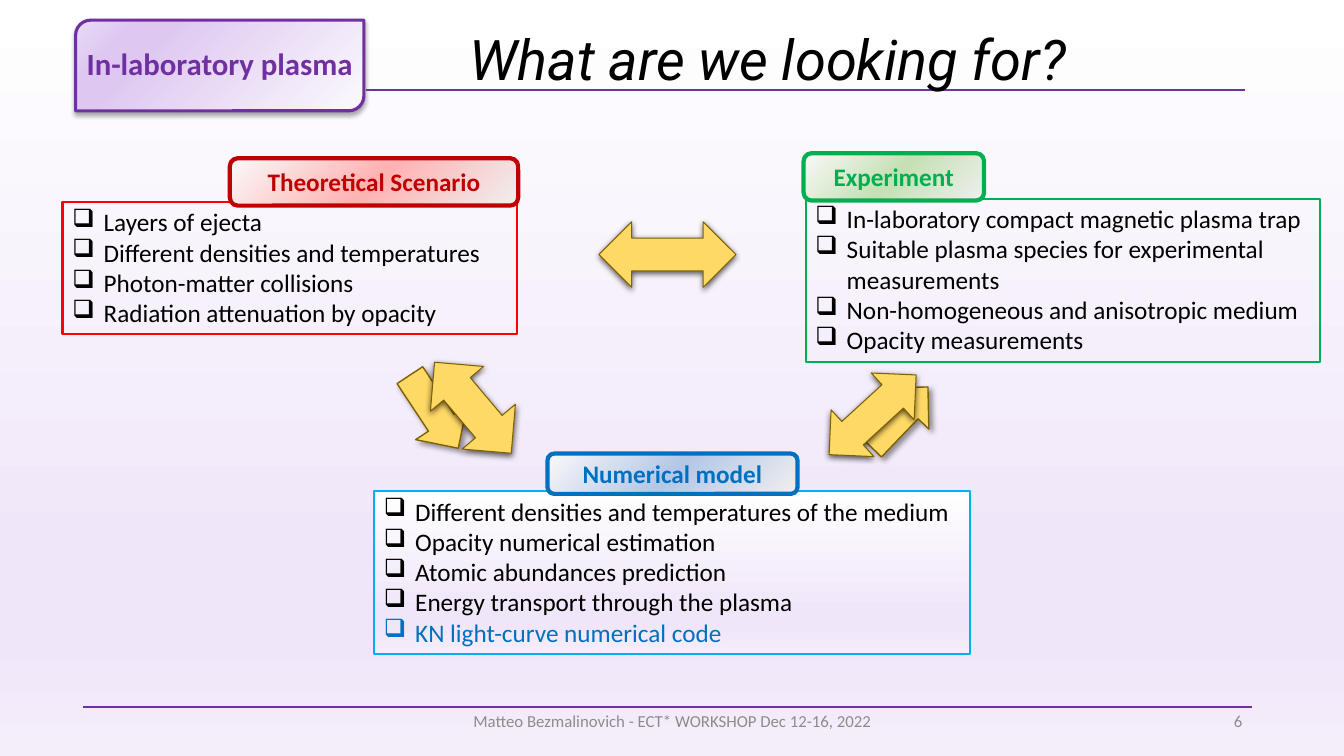
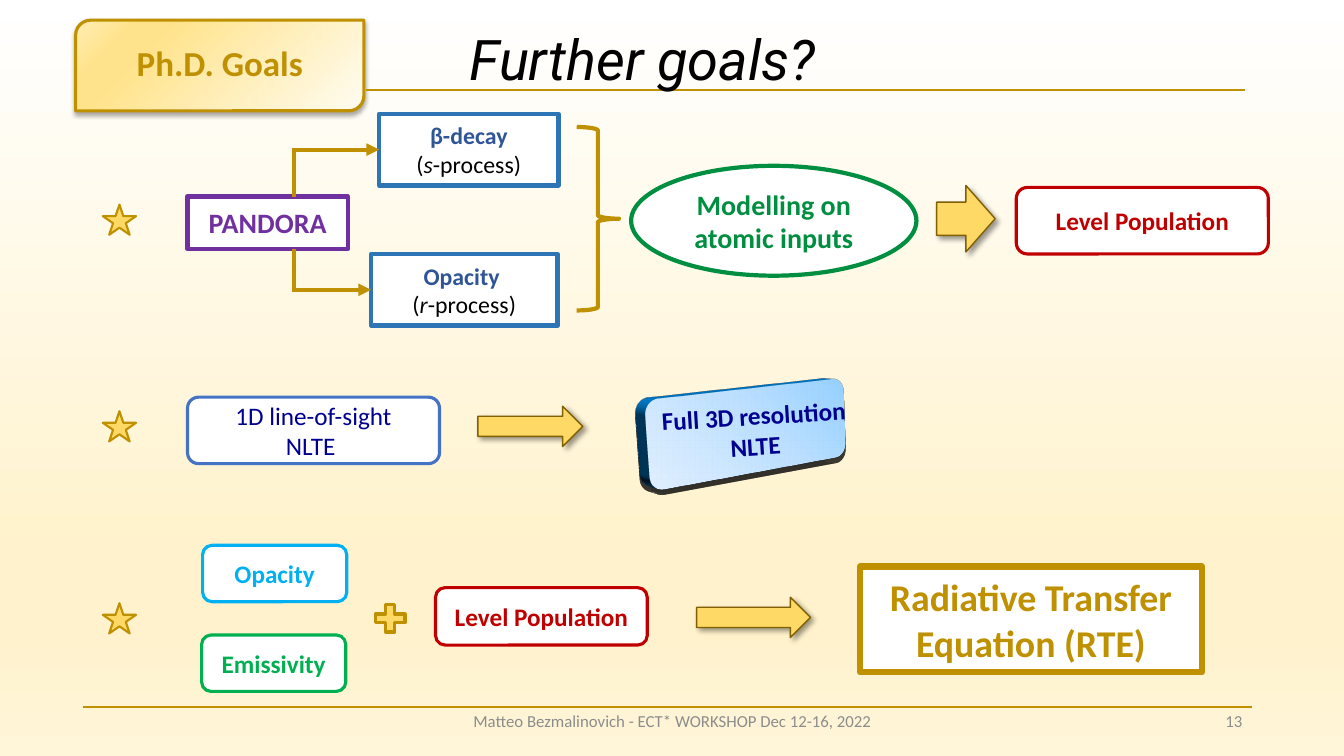
from dataclasses import dataclass

from pptx import Presentation
from pptx.dml.color import RGBColor
from pptx.enum.shapes import MSO_CONNECTOR as LINK, MSO_SHAPE as SHAPE
from pptx.enum.text import MSO_ANCHOR as ANCHOR, PP_ALIGN as ALIGN
from pptx.oxml.ns import qn
from pptx.oxml.xmlchemy import OxmlElement
from pptx.util import Inches, Pt

WHITE = RGBColor(0xFF, 0xFF, 0xFF)
BLACK = RGBColor(0, 0, 0)
GREY = RGBColor(0x8C, 0x8C, 0x8C)
PURPLE = RGBColor(0x70, 0x30, 0xA0)
LILAC = RGBColor(0xF0, 0xE6, 0xF9)
PALE_LILAC = RGBColor(0xF4, 0xED, 0xFA)
GOLD = RGBColor(0xBF, 0x90, 0x00)
DARK_GOLD = RGBColor(0x80, 0x60, 0x00)
YELLOW = RGBColor(0xFF, 0xD9, 0x66)
CREAM = RGBColor(0xFF, 0xF2, 0xCC)
PALE_CREAM = RGBColor(0xFF, 0xF6, 0xD9)
RED = RGBColor(0xFF, 0, 0)
DARK_RED = RGBColor(0xC0, 0, 0)
PINK = RGBColor(0xFF, 0xB2, 0xB2)
GREEN = RGBColor(0, 0xB0, 0x50)
DARK_GREEN = RGBColor(0, 0x8E, 0x40)
PALE_GREEN = RGBColor(0xC5, 0xE0, 0xB4)
SKY = RGBColor(0, 0xB0, 0xF0)
BLUE = RGBColor(0, 0x70, 0xC0)
BRIGHT_BLUE = RGBColor(0, 0x99, 0xFF)
STEEL = RGBColor(0x2E, 0x75, 0xB6)
SLATE = RGBColor(0x2F, 0x55, 0x97)
MID_BLUE = RGBColor(0x44, 0x72, 0xC4)
NAVY = RGBColor(0, 0, 0x90)
PALE_BLUE = RGBColor(0xB4, 0xC7, 0xE7)
PILL_START = RGBColor(0xF0, 0xEF, 0xEF)
PILL_END = RGBColor(0xFA, 0xF9, 0xF9)
FACE_STOPS = [(0, RGBColor(0x96, 0xD0, 0xFF)), (50, RGBColor(0xBF, 0xE1, 0xFF)),
              (100, RGBColor(0xE0, 0xEF, 0xFF))]

BODY_FONT = "Calibri"
TITLE_FONT = "Roboto"
FOOTER = "Matteo Bezmalinovich - ECT* WORKSHOP Dec 12-16, 2022"
TAB_SHADOW = (32, 3.5, 2.2, 90)
ARROW_SHADOW = (40, 4, 3, 45)
DOUBLE_ARROW_SHADOW = (63, 4.5, 1.5, 90)
BLOCK_SHADOW = (33, 17.8, 4, 87)


@dataclass
class Box:
    left: float
    top: float
    width: float
    height: float

    def at(self, right, down, width, height):
        return Box(self.left + right, self.top + down, width, height)

    def centred(self, right, width, height, down=0):
        return self.at(right, (self.height - height) / 2 + down, width, height)

    def lengths(self):
        return [Inches(value) for value in (self.left, self.top, self.width, self.height)]


def band_stops(start, tint, end):
    return [(0, start), (74, tint), (83, tint), (100, end)]


@dataclass
class Theme:
    accent: RGBColor
    backdrop: list
    tab: list


PURPLE_THEME = Theme(PURPLE, band_stops(WHITE, LILAC, PALE_LILAC),
                     band_stops(RGBColor(0xFB, 0xF9, 0xFD), RGBColor(0xDE, 0xC8, 0xF1),
                                RGBColor(0xE9, 0xDA, 0xF6)))
GOLD_THEME = Theme(GOLD, band_stops(WHITE, CREAM, PALE_CREAM),
                   band_stops(RGBColor(0xFF, 0xFC, 0xF2), RGBColor(0xFF, 0xE3, 0x8C),
                              RGBColor(0xFF, 0xEC, 0xB2)))


def add_child(parent, tag, **attributes):
    child = OxmlElement(tag)
    for name, value in attributes.items():
        child.set(name, str(value))
    parent.append(child)
    return child


def set_gradient(owner, fill, stops, angle=None):
    fill.gradient()
    gradient = owner._element.find(".//" + qn("a:gradFill"))
    for child in list(gradient):
        gradient.remove(child)
    stop_list = add_child(gradient, "a:gsLst")
    for position, colour in stops:
        stop = add_child(stop_list, "a:gs", pos=position * 1000)
        add_child(stop, "a:srgbClr", val=colour)
    if angle is None:
        circle = add_child(gradient, "a:path", path="circle")
        add_child(circle, "a:fillToRect", l=100000, t=100000)
    else:
        add_child(gradient, "a:lin", ang=angle * 60000, scaled=0)


def set_shadow(shape, opacity, blur, distance, angle):
    effects = shape._element.spPr.find(qn("a:effectLst"))
    shadow = add_child(effects, "a:outerShdw", blurRad=Pt(blur), dist=Pt(distance),
                       dir=angle * 60000, algn="ctr", rotWithShape=0)
    colour = add_child(shadow, "a:srgbClr", val=BLACK)
    add_child(colour, "a:alpha", val=opacity * 1000)


def set_depth(shape, depth, colour):
    properties = shape._element.spPr
    scene = add_child(properties, "a:scene3d")
    add_child(scene, "a:camera", prst="perspectiveHeroicExtremeRightFacing")
    add_child(scene, "a:lightRig", rig="threePt", dir="t")
    solid = add_child(properties, "a:sp3d", extrusionH=Inches(depth))
    side = add_child(solid, "a:extrusionClr")
    add_child(side, "a:srgbClr", val=colour)


def add_figure(page, kind, box, fill, line, weight, rotation=0, shadow=None):
    shape = page.shapes.add_shape(kind, *box.lengths())
    shape.shadow.inherit = False
    shape.rotation = rotation
    if fill is None:
        shape.fill.background()
    else:
        shape.fill.solid()
        shape.fill.fore_color.rgb = fill
    shape.line.color.rgb = line
    shape.line.width = Pt(weight)
    if shadow:
        set_shadow(shape, *shadow)
    return shape


def format_span(span, size, colour, bold=False, italic=False, font=BODY_FONT):
    span.font.name = font
    span.font.size = Pt(size)
    span.font.color.rgb = colour
    span.font.bold = bold
    span.font.italic = italic


def write(shape, text, size, colour, align=ALIGN.CENTER, anchor=ANCHOR.MIDDLE, **style):
    frame = shape.text_frame
    frame.word_wrap = True
    frame.vertical_anchor = anchor
    frame.text = text
    for para in frame.paragraphs:
        para.alignment = align
        for span in para.runs:
            format_span(span, size, colour, **style)


def add_text(page, box, text, size, colour, **style):
    write(page.shapes.add_textbox(*box.lengths()), text, size, colour, **style)


def add_line(page, start, end, colour, weight):
    line = page.shapes.add_connector(LINK.STRAIGHT, *[Inches(value) for value in start + end])
    line.line.color.rgb = colour
    line.line.width = Pt(weight)
    add_child(line._element.spPr, "a:effectLst")
    return line


def add_frame(page, theme, tab_text, tab_size, title, number):
    set_gradient(page, page.background.fill, theme.backdrop, 90)
    add_text(page, Box(4.42, 6.95, 4.5, 0.4), FOOTER, 12, GREY)
    add_text(page, Box(9.42, 6.95, 3, 0.4), number, 12, GREY, align=ALIGN.RIGHT)
    add_line(page, (0.82, 7.01), (12.42, 7.01), theme.accent, 1.5)
    tab = add_figure(page, SHAPE.ROUND_2_DIAG_RECTANGLE, Box(0.75, 0.2, 2.86, 0.9),
                     WHITE, theme.accent, 2.25, shadow=TAB_SHADOW)
    set_gradient(tab, tab.fill, theme.tab, 225)
    write(tab, tab_text, tab_size, theme.accent, bold=True)
    tab.text_frame.word_wrap = False
    tab.text_frame.margin_bottom = Inches(0.1)
    add_line(page, (3.63, 0.89), (12.35, 0.89), theme.accent, 1.5)
    add_text(page, Box(4.56, 0.19, 7.35, 0.77), title, 40, BLACK, align=ALIGN.LEFT,
             anchor=ANCHOR.TOP, italic=True, font=TITLE_FONT)


def add_panel(page, box, border, items, heading, heading_box, colour, tint):
    panel = add_figure(page, SHAPE.RECTANGLE, box, None, border, 1.5)
    write(panel, "\n".join(items), 18, BLACK, align=ALIGN.LEFT, anchor=ANCHOR.TOP)
    for para in panel.text_frame.paragraphs:
        properties = para._p.get_or_add_pPr()
        properties.set("marL", str(Inches(0.31)))
        properties.set("indent", str(-Inches(0.31)))
        add_child(properties, "a:buFont", typeface="Wingdings", charset=2)
        add_child(properties, "a:buChar", char="q")
    pill = add_figure(page, SHAPE.ROUNDED_RECTANGLE, heading_box, WHITE, colour, 3)
    set_gradient(pill, pill.fill, [(0, PILL_START), (50, tint), (100, PILL_END)])
    write(pill, heading, 18, colour, bold=True)
    return panel


def add_arrow(page, box, rotation=0):
    add_figure(page, SHAPE.RIGHT_ARROW, box, YELLOW, DARK_GOLD, 1, rotation, ARROW_SHADOW)


def add_double_arrow(page, box, rotation=0):
    add_figure(page, SHAPE.LEFT_RIGHT_ARROW, box, YELLOW, DARK_GOLD, 0.75, rotation,
               DOUBLE_ARROW_SHADOW)


def build_search_slide(page):
    add_frame(page, PURPLE_THEME, "In-laboratory plasma", 22, "What are we looking for?", "6")
    theory = Box(0.62, 2, 4.51, 1.31)
    add_panel(page, theory, RED,
              ["Layers of ejecta", "Different densities and temperatures",
               "Photon-matter collisions", "Radiation attenuation by opacity"],
              "Theoretical Scenario", theory.at(1.66, -0.43, 2.86, 0.47), DARK_RED, PINK)
    model = Box(3.71, 4.87, 5.91, 1.62)
    model_panel = add_panel(
        page, model, SKY,
        ["Different densities and temperatures of the medium", "Opacity numerical estimation",
         "Atomic abundances prediction", "Energy transport through the plasma",
         "KN light-curve numerical code"],
        "Numerical model", model.at(1.72, -0.37, 2.48, 0.4), BLUE, PALE_BLUE)
    set_gradient(model_panel, model_panel.fill, PURPLE_THEME.backdrop, 90)
    model_panel.text_frame.paragraphs[-1].runs[0].font.color.rgb = BLUE
    experiment = Box(7.99, 1.97, 5.1, 1.62)
    add_panel(page, experiment, GREEN,
              ["In-laboratory compact magnetic plasma trap",
               "Suitable plasma species for experimental measurements",
               "Non-homogeneous and anisotropic medium", "Opacity measurements"],
              "Experiment", experiment.at(-0.02, -0.45, 1.79, 0.47), GREEN, PALE_GREEN)
    add_double_arrow(page, Box(5.94, 2.2, 1.36, 0.65))
    add_arrow(page, Box(3.87, 3.78, 0.87, 0.61), 56.5)
    add_arrow(page, Box(8.51, 3.84, 0.82, 0.59), 313.8)
    add_double_arrow(page, Box(8.07, 3.8, 1.17, 0.63), 317.5)
    add_double_arrow(page, Box(4.1, 3.7, 1.18, 0.69), 49.9)


def add_star(page, row):
    add_figure(page, SHAPE.STAR_5_POINT, row.centred(0, 0.33, 0.3), YELLOW, GOLD, 1.5)


def add_label(page, box, text, size, colour, line=None, weight=2.25,
              kind=SHAPE.ROUNDED_RECTANGLE, bold=True):
    shape = add_figure(page, kind, box, WHITE, line or colour, weight)
    write(shape, text, size, colour, bold=bold)
    return shape


def add_process(page, box, heading, letter):
    shape = add_label(page, box, heading, 17, SLATE, STEEL, 3, SHAPE.RECTANGLE)
    para = shape.text_frame.add_paragraph()
    para.alignment = ALIGN.CENTER
    for text in ("(", letter, "-process)"):
        span = para.add_run()
        span.text = text
        format_span(span, 17, BLACK, italic=text == letter)
    return shape


def add_branch(page, stem, edge, target, box):
    middle = box.top + box.height / 2
    add_line(page, (stem, edge), (stem, middle), GOLD, 3)
    arrow = add_line(page, (stem - 0.02, middle), (box.left, middle), GOLD, 3)
    arrow.end_connect(target, 1)
    add_child(arrow.line._get_or_add_ln(), "a:tailEnd", type="triangle")


def add_atomic_goal(page, row):
    add_star(page, row)
    source = row.centred(0.84, 1.59, 0.52, 0.03)
    add_label(page, source, "PANDORA", 20, PURPLE, weight=3, kind=SHAPE.RECTANGLE)
    for box, heading, letter, edge in (
            (row.at(2.74, 0, 1.78, 0.71), "β-decay", "s", source.top),
            (row.at(2.66, 1.39, 1.85, 0.71), "Opacity ", "r", source.top + source.height)):
        target = add_process(page, box, heading, letter)
        add_branch(page, row.left + 1.9, edge, target, box)
    add_figure(page, SHAPE.RIGHT_BRACE, row.centred(4.7, 0.42, 1.82, -0.01), None, GOLD, 3)
    add_label(page, row.centred(5.24, 2.83, 1.09, 0.01), "Modelling on atomic inputs", 20,
              DARK_GREEN, weight=3, kind=SHAPE.OVAL)
    add_arrow(page, row.centred(8.27, 0.58, 0.66, -0.01))
    add_label(page, row.centred(9.06, 2.5, 0.66, 0.01), "Level Population", 18, DARK_RED)


def add_resolution_goal(page, row):
    add_star(page, row)
    add_label(page, row.centred(0.84, 2.5, 0.66, 0.04), "1D line-of-sight\nNLTE ", 18, NAVY,
              MID_BLUE, bold=False)
    add_arrow(page, row.centred(3.72, 1.04, 0.4))
    block = add_figure(page, SHAPE.ROUNDED_RECTANGLE, row.centred(5.28, 2.37, 0.84, 0.04),
                       WHITE, BLUE, 2.25, shadow=BLOCK_SHADOW)
    set_gradient(block, block.fill, FACE_STOPS, 135)
    set_depth(block, 0.2, BRIGHT_BLUE)
    write(block, "Full 3D resolution\nNLTE", 18, NAVY, bold=True)


def add_transfer_goal(page, row):
    add_star(page, row)
    add_label(page, row.at(0.99, 0, 1.43, 0.56), "Opacity", 18, SKY)
    add_label(page, row.at(0.98, 0.89, 1.43, 0.56), "Emissivity", 18, GREEN)
    add_figure(page, SHAPE.MATH_PLUS, row.centred(2.65, 0.4, 0.37), YELLOW, GOLD, 2.25)
    add_label(page, row.centred(3.3, 2.1, 0.57, -0.02), "Level Population", 18, DARK_RED)
    add_arrow(page, row.centred(5.89, 1.13, 0.4, -0.01))
    add_label(page, row.centred(7.51, 3.39, 1.05, 0.01), "Radiative Transfer Equation (RTE)",
              27, GOLD, weight=4.5, kind=SHAPE.RECTANGLE)


def build_goals_slide(page):
    add_frame(page, GOLD_THEME, "Ph.D. Goals", 25, "Further goals?", "13")
    add_atomic_goal(page, Box(1.02, 1.13, 11.56, 2.1))
    add_resolution_goal(page, Box(1.02, 3.73, 7.4, 1))
    add_transfer_goal(page, Box(1.02, 5.41, 10.9, 1.45))


def main():
    deck = Presentation()
    deck.slide_width = Inches(13.33)
    deck.slide_height = Inches(7.5)
    for build in (build_search_slide, build_goals_slide):
        build(deck.slides.add_slide(deck.slide_layouts[6]))
    deck.save("out.pptx")


if __name__ == "__main__":
    main()
